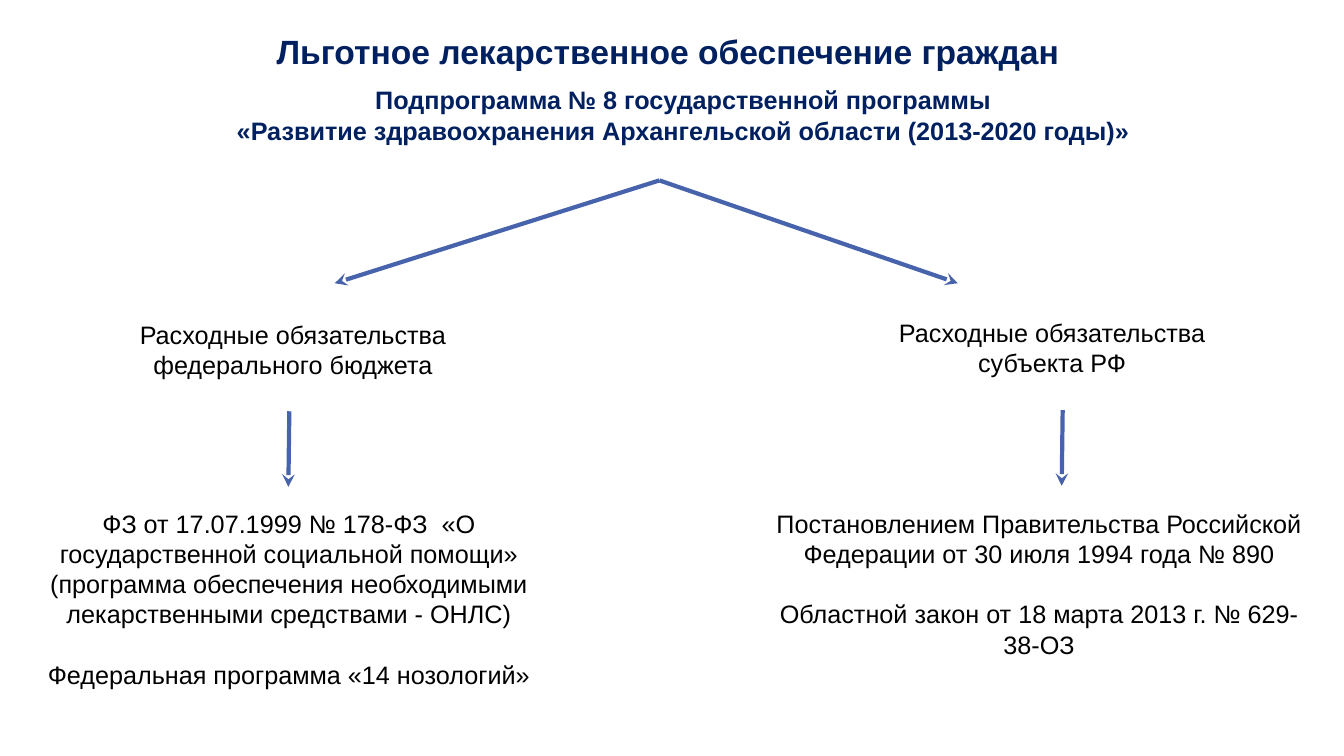
from pptx import Presentation
from pptx.dml.color import RGBColor
from pptx.enum.shapes import MSO_CONNECTOR
from pptx.enum.text import MSO_AUTO_SIZE, PP_ALIGN
from pptx.oxml.ns import qn
from pptx.util import Pt
from lxml import etree

STRAIGHT = MSO_CONNECTOR.STRAIGHT
CENTER = PP_ALIGN.CENTER
FIT_TEXT = MSO_AUTO_SIZE.SHAPE_TO_FIT_TEXT
NO_FIT = MSO_AUTO_SIZE.NONE

EMU_PER_PX = 9144  # 100 px to the inch

THEME = {
    "navy": RGBColor(0x00, 0x20, 0x60),
    "black": RGBColor(0, 0, 0),
    "arrow": RGBColor(0x46, 0x63, 0xAB),
    "font": "Arial",
    "title": Pt(24),
    "text": Pt(18),
    "arrow_width": Pt(3),
    "law_gap": Pt(21.6),
}


def px(length):
    return length * EMU_PER_PX


def add_text(slide, box, lines, size="text", color="black", bold=False,
             gap=0, fit=FIT_TEXT):
    """Centred text box, one paragraph per line, with a gap between them."""
    frame = slide.shapes.add_textbox(*map(px, box)).text_frame
    frame.word_wrap = True
    frame.auto_size = fit
    font_format = {"name": THEME["font"], "size": THEME[size], "bold": bold}
    for index, line in enumerate(lines):
        paragraph = frame.paragraphs[0] if index == 0 else frame.add_paragraph()
        paragraph.alignment = CENTER
        if index and gap:
            paragraph.space_before = gap
        font = paragraph.add_run().font
        paragraph.runs[0].text = line
        for attribute, value in font_format.items():
            setattr(font, attribute, value)
        font.color.rgb = THEME[color]


def add_arrow(slide, start, end):
    """Straight line with a stealth head at its end."""
    arrow = slide.shapes.add_connector(STRAIGHT, *map(px, start + end))
    arrow.line.color.rgb = THEME["arrow"]
    arrow.line.width = THEME["arrow_width"]
    properties = arrow.line._get_or_add_ln()
    etree.SubElement(properties, qn("a:tailEnd"), type="stealth")
    etree.SubElement(properties.getparent(), qn("a:effectLst"))


def main():
    deck = Presentation()
    deck.slide_width, deck.slide_height = px(1333), px(750)
    slide = deck.slides.add_slide(deck.slide_layouts[6])

    # Heading
    add_text(slide, (-4, 26, 1333, 50),
             ["Льготное лекарственное обеспечение граждан"],
             size="title", color="navy", bold=True)
    add_text(slide, (53, 79, 1249, 67),
             ["Подпрограмма № 8 государственной программы",
              "«Развитие здравоохранения Архангельской области (2013-2020 годы)»"],
             color="navy", bold=True, fit=NO_FIT)

    # Two budgets and the laws behind them
    fork = (654, 179)
    branches = [
        {
            "fork_end": (332, 281),
            "budget_box": (33, 312, 515, 71),
            "budget": ["Расходные обязательства", "федерального бюджета"],
            "law_arrow": ((287, 408), (286, 483)),
            "law_box": (29, 499, 515, 225),
            "laws": ["ФЗ от 17.07.1999 № 178-ФЗ  «О государственной социальной "
                     "помощи» (программа обеспечения необходимыми "
                     "лекарственными средствами - ОНЛС)",
                     "Федеральная программа «14 нозологий»"],
        },
        {
            "fork_end": (950, 281),
            "budget_box": (786, 310, 515, 71),
            "budget": ["Расходные обязательства", "субъекта РФ"],
            "law_arrow": ((1054, 407), (1053, 482)),
            "law_box": (751, 499, 559, 162),
            "laws": ["Постановлением Правительства Российской Федерации "
                     "от 30 июля 1994 года № 890",
                     "Областной закон от 18 марта 2013 г. № 629-38-ОЗ"],
        },
    ]
    for branch in branches:
        add_arrow(slide, fork, branch["fork_end"])
        add_text(slide, branch["budget_box"], branch["budget"])
        add_arrow(slide, *branch["law_arrow"])
        add_text(slide, branch["law_box"], branch["laws"], gap=THEME["law_gap"])

    deck.save("out.pptx")


if __name__ == "__main__":
    main()
